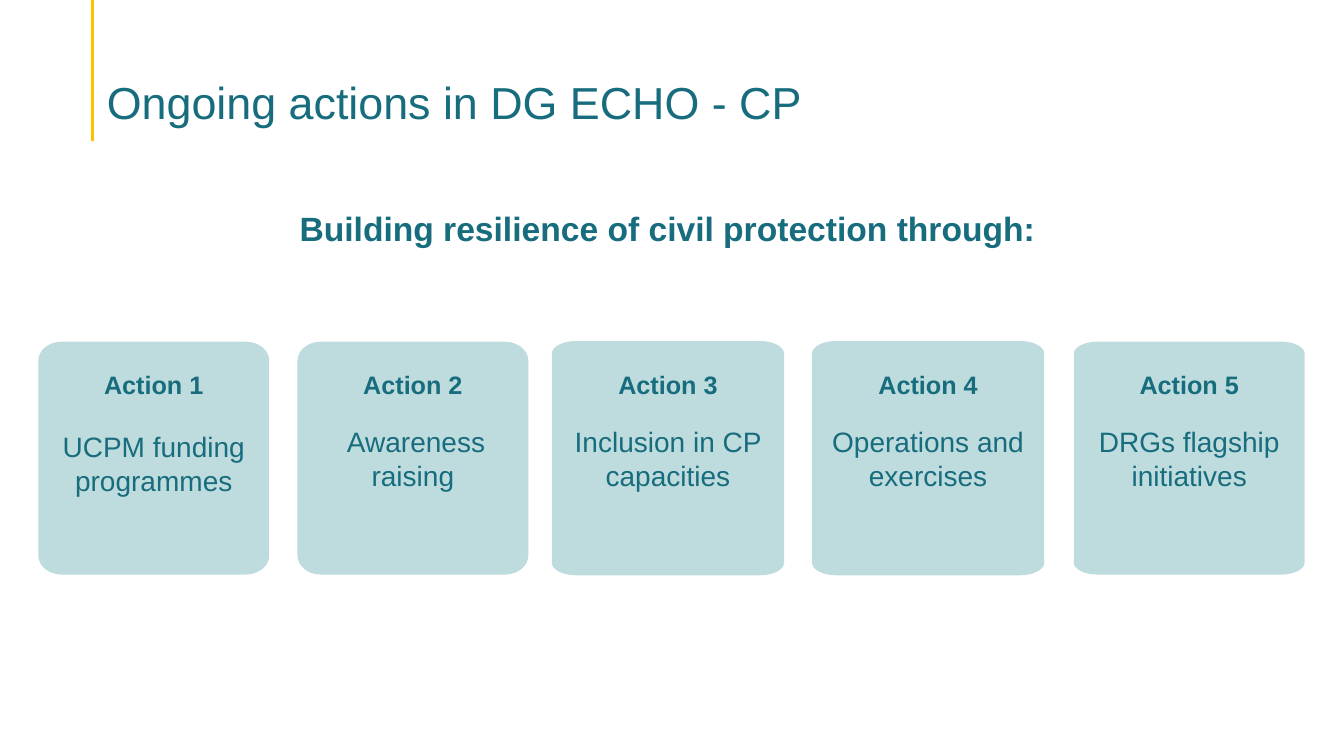
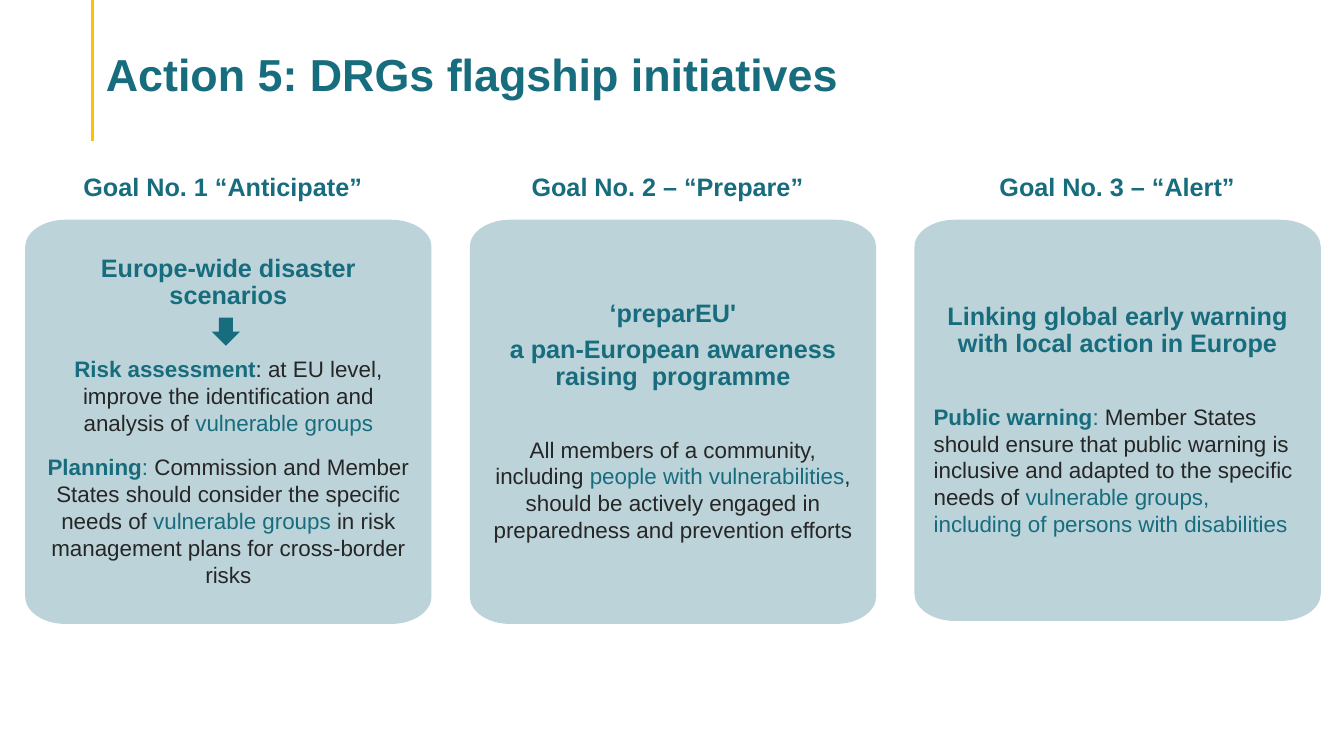
from lxml.etree import SubElement
from pptx import Presentation
from pptx.dml.color import RGBColor
from pptx.enum.shapes import MSO_CONNECTOR, MSO_SHAPE
from pptx.enum.text import MSO_ANCHOR, PP_ALIGN
from pptx.oxml.ns import qn
from pptx.util import Inches, Pt

# Shared look
FONT = "Arial"
COLORS = {"teal": "176C7D", "dark": "262626", "yellow": "FFC000",
          "white": "FFFFFF", "action": "BEDCDD", "goal": "BCD4D9"}
TITLE_ONLY = 5
CURVE = 0.55  # how far a corner's handles reach towards its vertex

# Content of the actions slide
ACTIONS_TITLE = "Ongoing actions in DG ECHO - CP"
ACTIONS_LEAD = "Building resilience of civil protection through:"
ACTIONS = [  # left, corner height, outline, extra top inset, text
    (0.38, 0.19, None, 0.1, "UCPM funding programmes"),
    (2.95, 0.19, None, 0, " Awareness raising"),
    (5.48, 0.12, "action", 0, "Inclusion in CP capacities"),
    (8.06, 0.12, "action", 0, "Operations and exercises"),
    (10.65, 0.12, None, 0, "DRGs flagship initiatives"),
]
ACTION_TOP, ACTION_WIDTH, ACTION_HEIGHT = 3.39, 2.29, 2.31
LABEL_WIDTH = 1.31

# Content of the goals slide: spans are (text, color, bold)
GOALS_TITLE = "Action 5: DRGs flagship initiatives"
HEADING = {"size": 18, "line_spacing": 0.9, "after": 6.3}
LAST_HEADING = {**HEADING, "after": 32}
BODY = {"size": 16}
GOALS = [
    {"label": "Goal No. 1 “Anticipate”", "label_center": 2.21, "height": 4.01,
     "paragraphs": [
         ([("Europe-wide disaster scenarios", "teal", True)], LAST_HEADING),
         ([("Risk assessment", "teal", True),
           (": at EU level, improve the identification and analysis of ", "dark", False),
           ("vulnerable groups", "teal", False)], {**BODY, "after": 12.7}),
         ([("Planning", "teal", True), (": ", "teal", False),
           ("Commission and Member States should consider the specific needs of ",
            "dark", False),
           ("vulnerable groups ", "teal", False),
           ("in risk management plans for cross-border risks", "dark", False)], BODY),
     ]},
    {"label": "Goal No. 2 – “Prepare”", "label_center": 6.62, "height": 4.01,
     "paragraphs": [
         ([("‘preparEU'", "teal", True)], HEADING),
         ([("a pan-European awareness raising  programme", "teal", True)], LAST_HEADING),
         ([("All members of a community, including ", "dark", False),
           ("people with vulnerabilities", "teal", False),
           (", should be actively engaged in preparedness and prevention efforts",
            "dark", False)], BODY),
     ]},
    {"label": "Goal No. 3 – “Alert”", "label_center": 11.08, "height": 3.98,
     "paragraphs": [
         ([("Linking global early warning with local action in Europe", "teal", True)],
          LAST_HEADING),
         ([("Public warning", "teal", True), (": ", "teal", False),
           ("Member States should ensure that public warning is inclusive and "
            "adapted to the specific needs of ", "dark", False),
           ("vulnerable groups, including of persons with disabilities",
            "teal", False)], {**BODY, "align": PP_ALIGN.LEFT}),
     ]},
]
GOAL_LEFT, GOAL_STEP, GOAL_TOP, GOAL_WIDTH = 0.25, 4.41, 2.18, 4.03
GOAL_LABEL_WIDTH = 3.7


def color(name):
    return RGBColor.from_string(COLORS[name])


def set_line(shape, name, width):
    shape.line.color.rgb = color(name)
    shape.line.width = Pt(width)


def set_frame(frame, insets, anchor):
    frame.word_wrap = True
    frame.vertical_anchor = anchor
    (frame.margin_left, frame.margin_top,
     frame.margin_right, frame.margin_bottom) = [Inches(inset) for inset in insets]


def write(para, spans, size, align=PP_ALIGN.CENTER, line_spacing=1.0, after=0):
    para.alignment = align
    para.line_spacing = line_spacing
    para.space_before = Pt(0)
    para.space_after = Pt(after)
    for text, color_name, bold in spans:
        span = para.add_run()
        span.text = text
        span.font.name = FONT
        span.font.size = Pt(size)
        span.font.bold = bold
        span.font.color.rgb = color(color_name)


def add_label(slide, text, left, top, width, height, size=18,
              anchor=MSO_ANCHOR.TOP, line_spacing=1.0):
    box = slide.shapes.add_textbox(Inches(left), Inches(top), Inches(width), Inches(height))
    set_frame(box.text_frame, (0.1, 0.05, 0.1, 0.05), anchor)
    write(box.text_frame.paragraphs[0], [(text, "teal", True)], size,
          line_spacing=line_spacing)
    return box


def add_rounded_box(slide, left, top, width, height, corner):
    """Draw a box whose corners are curves of the given width and height."""
    radius_x, radius_y = corner
    right, bottom = left + width, top + height
    points = [(Inches(x), Inches(y)) for x, y in (
        (left, top + radius_y), (left + radius_x, top),
        (right - radius_x, top), (right, top + radius_y),
        (right, bottom - radius_y), (right - radius_x, bottom),
        (left + radius_x, bottom), (left, bottom - radius_y))]
    builder = slide.shapes.build_freeform(*points[0])
    builder.add_line_segments(points[1:], close=True)
    box = builder.convert_to_shape()
    local = [(x - box.left, y - box.top) for x, y in points]
    segments = list(box.element.iter(qn("a:lnTo")))
    # Every other segment spans a corner: turn it into a curve
    for index in range(0, 8, 2):
        start, end = local[index], local[index + 1]
        vertex = (start[0], end[1]) if index % 4 == 0 else (end[0], start[1])
        handles = [[round(a + CURVE * (b - a)) for a, b in zip(point, vertex)]
                   for point in (start, end)]
        segment = segments[index]
        curve = SubElement(segment.getparent(), qn("a:cubicBezTo"))
        for x, y in (*handles, end):
            SubElement(curve, qn("a:pt"), x=str(x), y=str(y))
        segment.getparent().replace(segment, curve)
    return box


def add_card(slide, left, top, width, height, corner, fill, paragraphs,
             inset, top_inset=0, outline=None):
    card = add_rounded_box(slide, left, top, width, height, corner)
    card.shadow.inherit = False
    card.fill.solid()
    card.fill.fore_color.rgb = color(fill)
    if outline:
        set_line(card, outline, 1)
    else:
        card.line.fill.background()
    frame = card.text_frame
    set_frame(frame, (inset, inset + top_inset, inset, inset), MSO_ANCHOR.MIDDLE)
    for index, (spans, style) in enumerate(paragraphs):
        para = frame.add_paragraph() if index else frame.paragraphs[0]
        write(para, spans, **style)


def start_slide(deck, title, position, bottom_inset, line_spacing, bold):
    """Add a slide with the yellow rule and the styled title."""
    slide = deck.slides.add_slide(deck.slide_layouts[TITLE_ONLY])
    rule = slide.shapes.add_connector(MSO_CONNECTOR.STRAIGHT, Inches(0.92), 0,
                                      Inches(0.92), Inches(1.4))
    set_line(rule, "yellow", 2.25)
    SubElement(rule.element.spPr, qn("a:effectLst"))
    box = slide.shapes.title
    box.left, box.top, box.width, box.height = [Inches(value) for value in position]
    set_frame(box.text_frame, (0.1, 0.05, 0.1, bottom_inset), MSO_ANCHOR.BOTTOM)
    write(box.text_frame.paragraphs[0], [(title, "teal", bold)], 32,
          align=PP_ALIGN.LEFT, line_spacing=line_spacing)
    return slide


def build_actions(deck):
    slide = start_slide(deck, ACTIONS_TITLE, (0.96, 0.42, 11.5, 0.86), 0, 0.9, bold=False)
    lead = add_label(slide, ACTIONS_LEAD, 0.35, 2.02, 12.54, 0.49, size=24,
                     anchor=MSO_ANCHOR.BOTTOM)
    set_line(lead, "white", 0.75)
    for number, (left, corner, outline, top_inset, text) in enumerate(ACTIONS, 1):
        add_card(slide, left, ACTION_TOP, ACTION_WIDTH, ACTION_HEIGHT, (0.23, corner),
                 "action", [([(text, "teal", False)], {"size": 20})],
                 0.16, top_inset, outline)
        add_label(slide, f"Action {number}", left + (ACTION_WIDTH - LABEL_WIDTH) / 2,
                  3.65, LABEL_WIDTH, 0.37, line_spacing=0.9)


def build_goals(deck):
    slide = start_slide(deck, GOALS_TITLE, (0.95, 0.56, 11.32, 0.49), 0.05, 1.0, bold=True)
    set_line(slide.shapes.title, "white", 0.75)
    for index, goal in enumerate(GOALS):
        add_card(slide, GOAL_LEFT + index * GOAL_STEP, GOAL_TOP, GOAL_WIDTH,
                 goal["height"], (0.4, 0.27), "goal", goal["paragraphs"], 0.19)
        add_label(slide, goal["label"], goal["label_center"] - GOAL_LABEL_WIDTH / 2,
                  1.65, GOAL_LABEL_WIDTH, 0.4)
    # Arrow from the scenarios to the risk assessment
    arrow = slide.shapes.add_shape(MSO_SHAPE.DOWN_ARROW, Inches(2.1), Inches(3.15),
                                   Inches(0.28), Inches(0.28))
    arrow.shadow.inherit = False
    arrow.fill.solid()
    arrow.fill.fore_color.rgb = color("teal")
    arrow.line.fill.background()


def main():
    deck = Presentation()
    deck.slide_width, deck.slide_height = Inches(13.33), Inches(7.5)
    build_actions(deck)
    build_goals(deck)
    deck.save("out.pptx")


if __name__ == "__main__":
    main()
